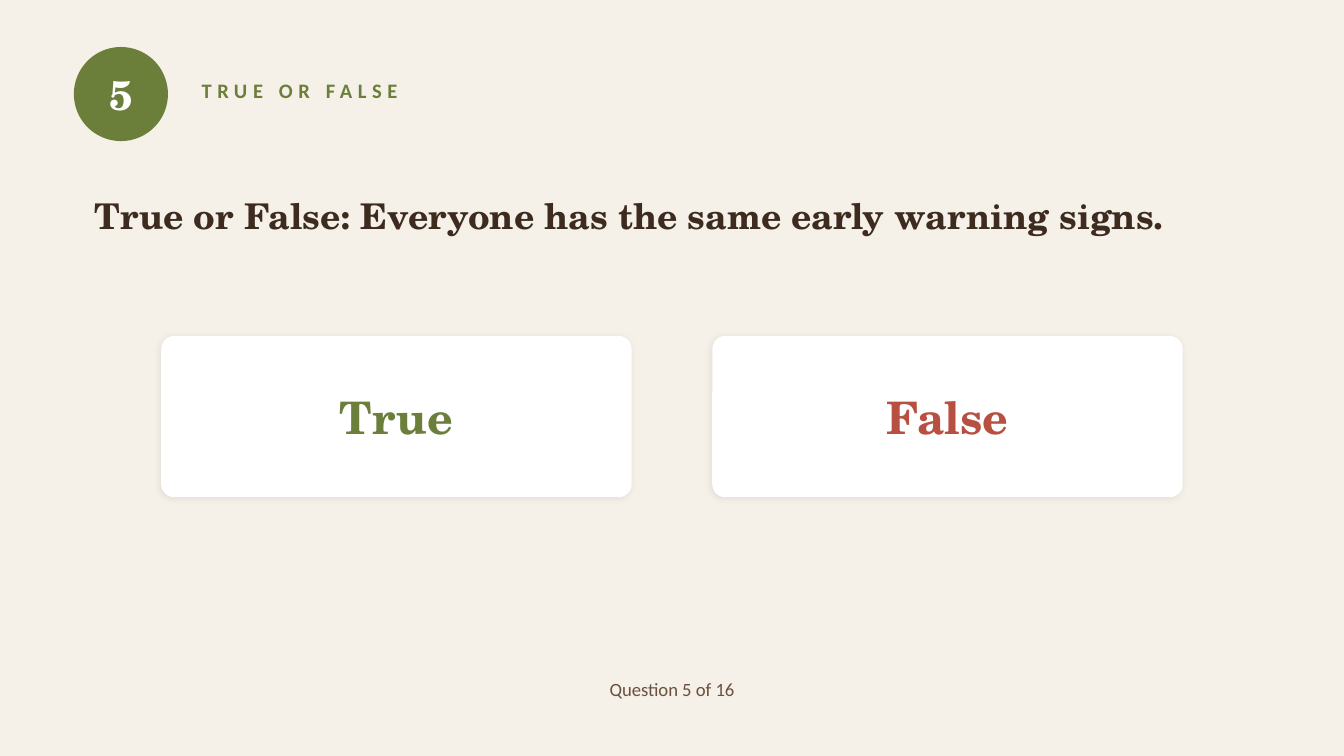
import lxml.etree
import pptx
import pptx.dml.color
import pptx.enum.shapes
import pptx.enum.text
import pptx.oxml.ns
import pptx.util

Pt = pptx.util.Pt
Shape = pptx.enum.shapes.MSO_SHAPE
Align = pptx.enum.text.PP_ALIGN
SERIF, SANS = "TeX Gyre Schola", "Calibri"
COLOURS = {
    "cream": "F5F0E8",
    "olive": "6B7F3B",
    "white": "FFFFFF",
    "bark": "3D2B1F",
    "rust": "B85042",
    "brown": "6B4F3E",
    "black": "000000",
}


def colour(name):
    """Return the named colour."""
    return pptx.dml.color.RGBColor.from_string(COLOURS[name])


def write(shape, text, face, size, ink, align=Align.CENTER, bold=True, spacing=0):
    """Set one middle-anchored paragraph in a shape without insets."""
    frame = shape.text_frame
    frame.word_wrap = True
    frame.vertical_anchor = pptx.enum.text.MSO_ANCHOR.MIDDLE
    frame.margin_left = frame.margin_top = frame.margin_right = frame.margin_bottom = 0
    para = frame.paragraphs[0]
    para.alignment = align
    span = para.add_run()
    span.text = text
    if spacing:
        span._r.get_or_add_rPr().set("spc", str(spacing * 100))
    para.font.name, para.font.size, para.font.bold = face, Pt(size), bold
    para.font.color.rgb = colour(ink)


def add_label(page, box, text, face, size, ink, **style):
    """Add a text box that fills the given box."""
    label = page.shapes.add_textbox(*map(Pt, box))
    write(label, text, face, size, ink, **style)


def add_panel(page, kind, box, fill):
    """Add a filled shape with no line and no shadow."""
    panel = page.shapes.add_shape(kind, *map(Pt, box))
    panel.shadow.inherit = False
    panel.fill.solid()
    panel.fill.fore_color.rgb = colour(fill)
    panel.line.fill.background()
    return panel


def add_soft_shadow(shape):
    """Give a shape a faint shadow to the lower left."""
    qn = pptx.oxml.ns.qn
    effects = shape._element.spPr.find(qn("a:effectLst"))
    shadow = lxml.etree.SubElement(
        effects, qn("a:outerShdw"), blurRad=str(Pt(4)), dist=str(Pt(1)),
        dir=str(135 * 60000), algn="bl", rotWithShape="0")
    tint = lxml.etree.SubElement(shadow, qn("a:srgbClr"), val=COLOURS["black"])
    lxml.etree.SubElement(tint, qn("a:alpha"), val="8000")


def add_header(page, box, number, category):
    """Place the number badge and the category beside it."""
    left, top, width, height = box
    badge = add_panel(page, Shape.OVAL, (left, top, height, height), "olive")
    write(badge, str(number), SERIF, 22, "white")
    indent = 68.4
    add_label(page, (left + indent, top + 5.04, width - indent, 36), category,
              SANS, 11, "olive", align=Align.LEFT, spacing=3)


def add_answers(page, box, answers, gap):
    """Place the answer cards in equal columns."""
    left, top, width, height = box
    card_width = (width - gap * (len(answers) - 1)) / len(answers)
    for index, (text, ink) in enumerate(answers):
        card_left = left + index * (card_width + gap)
        card = add_panel(page, Shape.ROUNDED_RECTANGLE,
                         (card_left, top, card_width, height), "white")
        card.adjustments[0] = 0.08
        add_soft_shadow(card)
        write(card, text, SERIF, 24, ink)


def add_question_slide(deck, number, total, category, question, answers):
    """Build one quiz question slide."""
    page = deck.slides.add_slide(deck.slide_layouts[6])
    page.background.fill.solid()
    page.background.fill.fore_color.rgb = colour("cream")
    add_header(page, (39.6, 25.2, 284.4, 50.4), number, category)
    add_label(page, (50.4, 82.8, 619.2, 64.8), question, SERIF, 19, "bark",
              align=Align.LEFT)
    add_answers(page, (86.4, 180, 547.2, 86.4), answers, 43.2)
    add_label(page, (36, 356.4, 648, 25.2), f"Question {number} of {total}",
              SANS, 10, "brown", bold=False)


def main():
    """Build and save the deck."""
    deck = pptx.Presentation()
    deck.slide_width, deck.slide_height = Pt(720), Pt(405)
    add_question_slide(
        deck, 5, 16, "TRUE OR FALSE",
        "True or False: Everyone has the same early warning signs.",
        [("True", "olive"), ("False", "rust")])
    deck.save("out.pptx")


if __name__ == "__main__":
    main()
